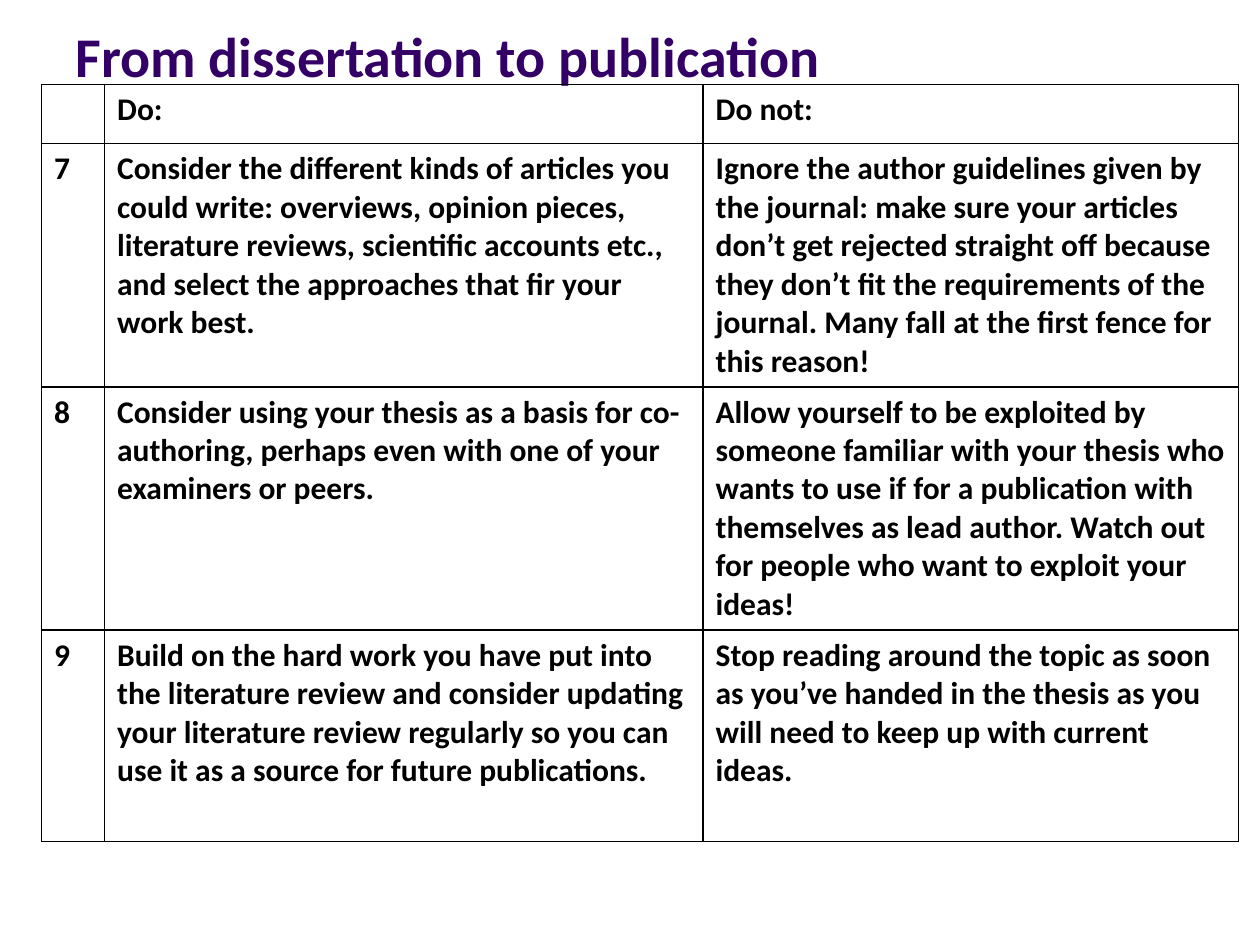
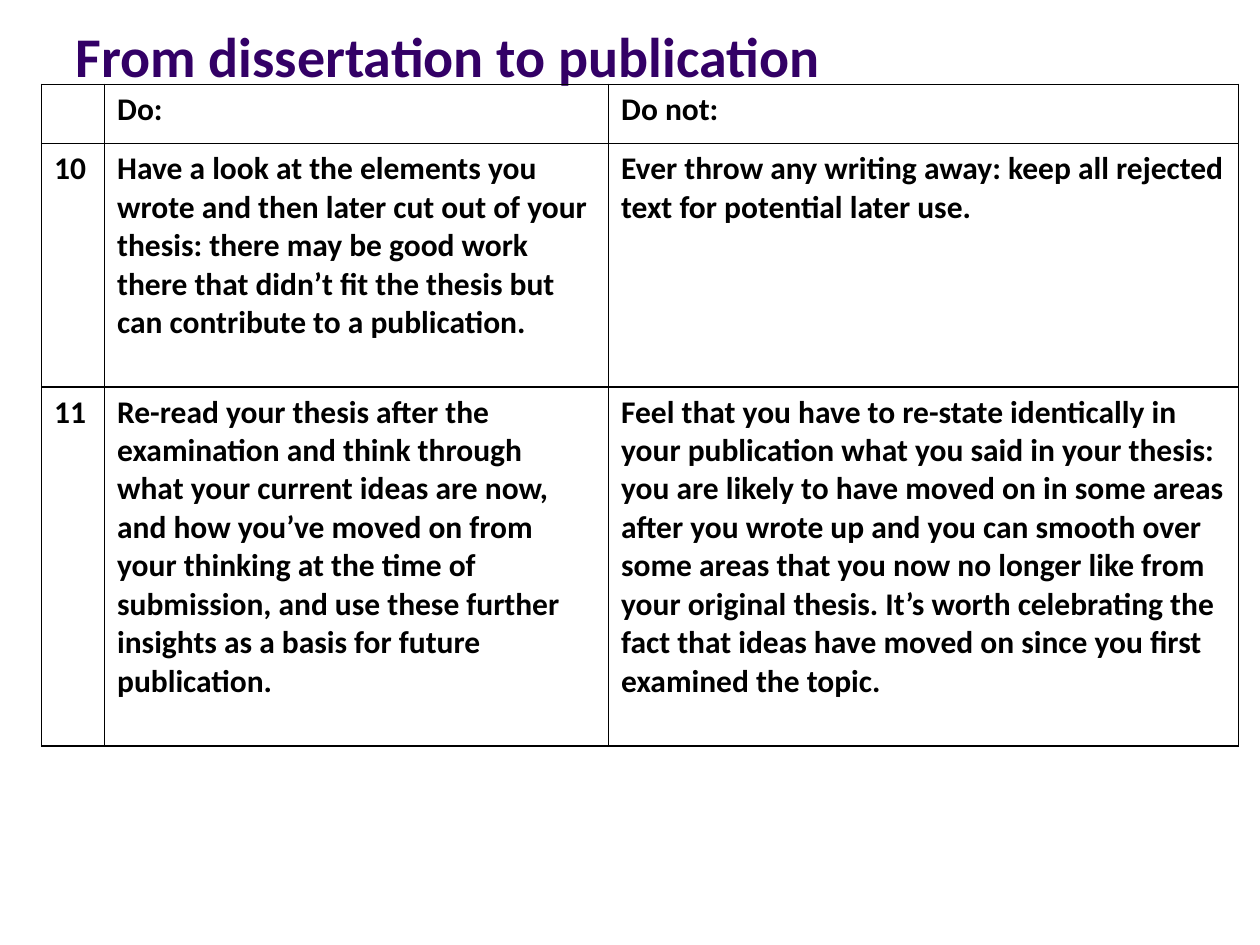
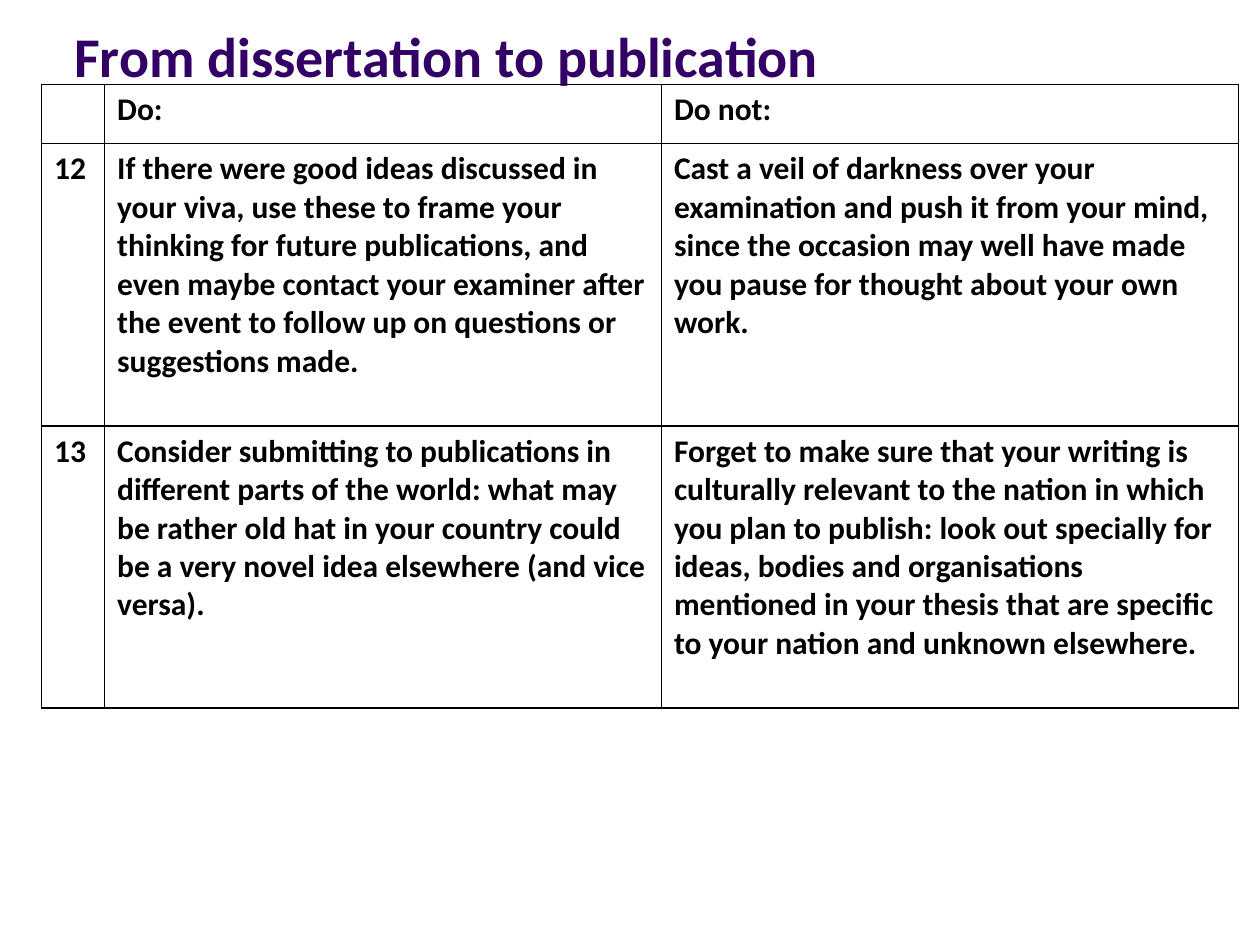
from lxml import etree
from pptx import Presentation
from pptx import util as u
from pptx.dml.color import RGBColor
from pptx.enum import text
from pptx.oxml import ns

TITLE = "From dissertation to publication"
HEADER = ("", "Do:", "Do not:")
FONT = "Calibri"
PURPLE = RGBColor(0x33, 0x00, 0x66)
BLACK = RGBColor(0x00, 0x00, 0x00)
NUMBER_WIDTH = 0.5
TABLE_WIDTH = 9.5
HEADER_HEIGHT = 0.47

ADVICE = [
    {
        "title_left": 0.5,
        "do_width": 4.75,
        "heights": [1.93, 1.93, 1.68],
        "rows": [
            ("7",
             "Consider the different kinds of articles you could write: overviews, opinion pieces, "
             "literature reviews, scientific accounts etc., and select the approaches that fir your "
             "work best.",
             "Ignore the author guidelines given by the journal: make sure your articles don’t get "
             "rejected straight off because they don’t fit the requirements of the journal. Many fall "
             "at the first fence for this reason!"),
            ("8",
             "Consider using your thesis as a basis for co-authoring, perhaps even with one of your "
             "examiners or peers.",
             "Allow yourself to be exploited by someone familiar with your thesis who wants to use if "
             "for a publication with themselves as lead author. Watch out for people who want to "
             "exploit your ideas!"),
            ("9",
             "Build on the hard work you have put into the literature review and consider updating "
             "your literature review regularly so you can use it as a source for future publications.",
             "Stop reading around the topic as soon as you’ve handed in the thesis as you will need "
             "to keep up with current ideas."),
        ],
    },
    {
        "title_left": 0.5,
        "do_width": 4,
        "heights": [1.93, 2.85],
        "rows": [
            ("10",
             "Have a look at the elements you wrote and then later cut out of your thesis: there may "
             "be good work there that didn’t fit the thesis but can contribute to a publication.",
             "Ever throw any writing away: keep all rejected text for potential later use."),
            ("11",
             "Re-read your thesis after the examination and think through what your current ideas are "
             "now, and how you’ve moved on from your thinking at the time of submission, and use these "
             "further insights as a basis for future publication.",
             "Feel that you have to re-state identically in your publication what you said in your "
             "thesis: you are likely to have moved on in some areas after you wrote up and you can "
             "smooth over some areas that you now no longer like from your original thesis. It’s worth "
             "celebrating the fact that ideas have moved on since you first examined the topic."),
        ],
    },
    {
        "title_left": 0.49,
        "do_width": 4.42,
        "heights": [2.24, 2.24],
        "rows": [
            ("12",
             "If there were good ideas discussed in your viva, use these to frame your thinking for "
             "future publications, and even maybe contact your examiner after the event to follow up "
             "on questions or suggestions made.",
             "Cast a veil of darkness over your examination and push it from your mind, since the "
             "occasion may well have made you pause for thought about your own work."),
            ("13",
             "Consider submitting to publications in different parts of the world: what may be rather "
             "old hat in your country could be a very novel idea elsewhere (and vice versa).",
             "Forget to make sure that your writing is culturally relevant to the nation in which you "
             "plan to publish: look out specially for ideas, bodies and organisations mentioned in "
             "your thesis that are specific to your nation and unknown elsewhere."),
        ],
    },
]


def style_font(font, size, color):
    font.name = FONT
    font.size = u.Pt(size)
    font.bold = True
    font.color.rgb = color


def add_title(s, left):
    sp = s.shapes.add_textbox(u.Inches(left), u.Inches(0.17), u.Inches(8.75 - left), u.Inches(0.58))
    tf = sp.text_frame
    tf.word_wrap = True
    tf.vertical_anchor = text.MSO_ANCHOR.BOTTOM
    tf.text = TITLE
    style_font(tf.paragraphs[0].runs[0].font, 32, PURPLE)


def add_borders(cell):
    tc_pr = cell._tc.get_or_add_tcPr()
    for side in ("a:lnL", "a:lnR", "a:lnT", "a:lnB"):
        ln = etree.SubElement(tc_pr, ns.qn(side), w=str(u.Pt(1)))
        fill = etree.SubElement(ln, ns.qn("a:solidFill"))
        etree.SubElement(fill, ns.qn("a:srgbClr"), val=str(BLACK))


def fill_cell(cell, words):
    add_borders(cell)
    cell.fill.background()
    p = cell.text_frame.paragraphs[0]
    if not words:
        p.font.size = u.Pt(18)
        return
    p.text = words
    style_font(p.runs[0].font, 18, BLACK)


def add_advice_table(s, do_width, heights, rows):
    rows = [HEADER, *rows]
    heights = [HEADER_HEIGHT, *heights]
    widths = [NUMBER_WIDTH, do_width, TABLE_WIDTH - NUMBER_WIDTH - do_width]
    table = s.shapes.add_table(len(rows), len(widths), u.Inches(0.33), u.Inches(0.67),
                               u.Inches(TABLE_WIDTH), u.Inches(sum(heights))).table
    table.first_row = False
    table.horz_banding = False
    for column, width in zip(table.columns, widths):
        column.width = u.Inches(width)
    for row, height, entries in zip(table.rows, heights, rows):
        row.height = u.Inches(height)
        for cell, words in zip(row.cells, entries):
            fill_cell(cell, words)


def main():
    prs = Presentation()
    prs.slide_width = u.Inches(10)
    prs.slide_height = u.Inches(7.5)
    for advice in ADVICE:
        s = prs.slides.add_slide(prs.slide_layouts[6])
        add_title(s, advice["title_left"])
        add_advice_table(s, advice["do_width"], advice["heights"], advice["rows"])
    prs.save("out.pptx")


if __name__ == "__main__":
    main()
